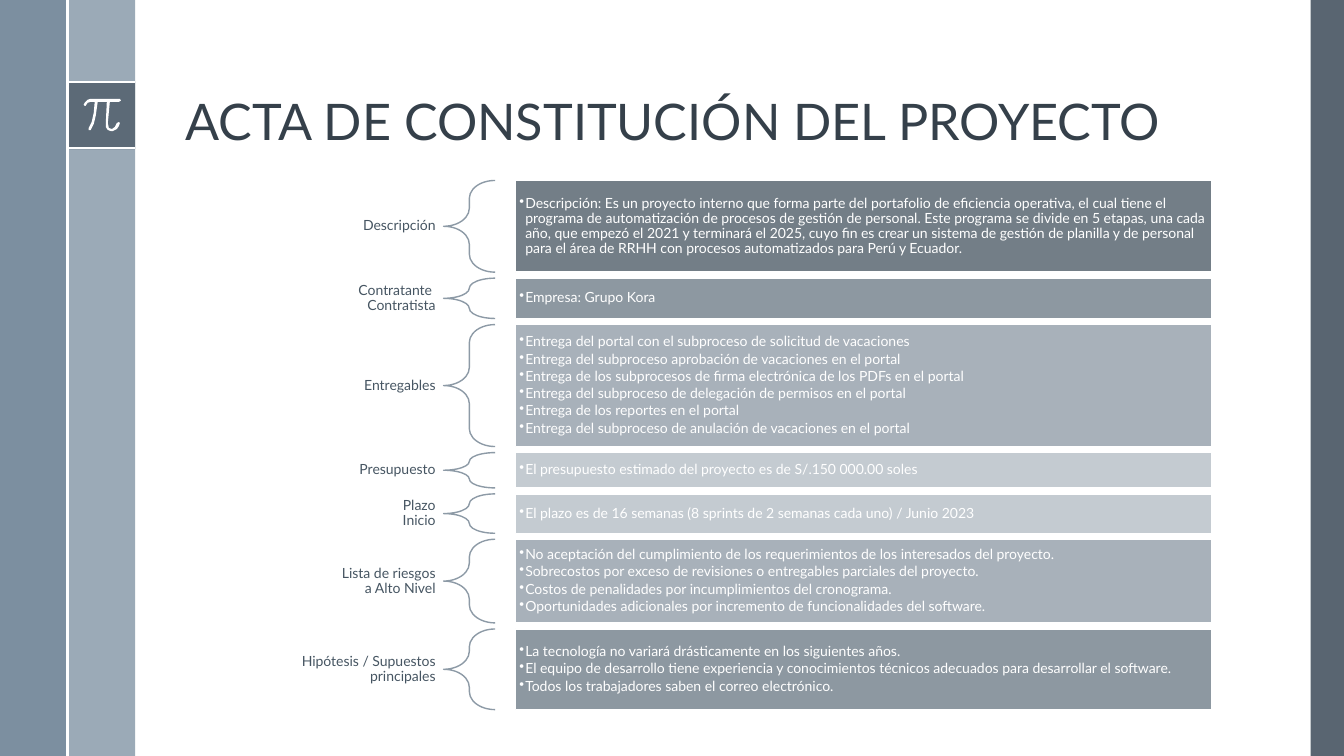
from dataclasses import dataclass

from lxml import etree
from pptx import Presentation
from pptx import util as u
from pptx.dml.color import RGBColor
from pptx.enum import shapes, text
from pptx.oxml.ns import qn


@dataclass(frozen=True)
class Theme:
    font: str = "Lato"
    title_size: int = 36
    text_size: int = 10
    white: str = "FFFFFF"
    title: str = "35404A"
    label: str = "465562"
    brace: str = "8D9AA6"
    dark: str = "475562"
    steel: str = "6A8093"
    mist: str = "9BAAB7"
    tones: tuple = ("737E87", "8D98A1", "A8B1BA", "C4CBD1")


PI_OUTLINE = [
    (1.18, 0.98), (0.9, 0.98), (0.87, 0.99), (0.84, 1.02), (0.83, 1.04),
    (0.84, 1.05), (0.85, 1.05), (0.87, 1.02), (0.9, 1.01), (0.94, 1.01),
    (0.93, 1.12), (0.91, 1.21), (0.88, 1.27), (0.88, 1.29), (0.9, 1.29),
    (0.93, 1.23), (0.95, 1.15), (0.97, 1.01), (1.06, 1.01), (1.05, 1.22),
    (1.05, 1.26), (1.07, 1.29), (1.1, 1.3), (1.12, 1.3), (1.16, 1.28),
    (1.18, 1.25), (1.19, 1.22), (1.18, 1.21), (1.16, 1.22), (1.14, 1.26),
    (1.11, 1.28), (1.08, 1.27), (1.07, 1.22), (1.09, 1.01), (1.18, 1.01),
    (1.2, 1), (1.19, 0.98),
]

SECTIONS = [
    ("Descripción", 0.91, 0, [
        "Descripción: Es un proyecto interno que forma parte del portafolio de "
        "eficiencia operativa, el cual tiene el programa de automatización de "
        "procesos de gestión de personal. Este programa se divide en 5 etapas, "
        "una cada año, que empezó el 2021 y terminará el 2025, cuyo fin es crear "
        "un sistema de gestión de planilla y de personal para el área de RRHH "
        "con procesos automatizados para Perú y Ecuador."]),
    ("Contratante \nContratista", 0.4, 1, ["Empresa: Grupo Kora"]),
    ("Entregables", 1.21, 2, [
        "Entrega del portal con el subproceso de solicitud de vacaciones",
        "Entrega del subproceso aprobación de vacaciones en el portal",
        "Entrega de los subprocesos de firma electrónica de los PDFs en el portal",
        "Entrega del subproceso de delegación de permisos en el portal",
        "Entrega de los reportes en el portal",
        "Entrega del subproceso de anulación de vacaciones en el portal"]),
    ("Presupuesto", 0.35, 3, [
        "El presupuesto estimado del proyecto es de S/.150 000.00 soles"]),
    ("Plazo\nInicio", 0.39, 3, [
        "El plazo es de 16 semanas (8 sprints de 2 semanas cada uno) / Junio 2023"]),
    ("Lista de riesgos\na Alto Nivel", 0.83, 2, [
        "No aceptación del cumplimiento de los requerimientos de los interesados del proyecto.",
        "Sobrecostos por exceso de revisiones o entregables parciales del proyecto.",
        "Costos de penalidades por incumplimientos del cronograma.",
        "Oportunidades adicionales por incremento de funcionalidades del software."]),
    ("Hipótesis / Supuestos\nprincipales", 0.8, 1, [
        "La tecnología no variará drásticamente en los siguientes años.",
        "El equipo de desarrollo tiene experiencia y conocimientos técnicos "
        "adecuados para desarrollar el software.",
        "Todos los trabajadores saben el correo electrónico."]),
]


class CharterSlide:
    def __init__(self, page, theme):
        self.page = page
        self.theme = theme

    def paint(self, shape, color, alpha=100):
        shape.shadow.inherit = False
        shape.fill.solid()
        shape.fill.fore_color.rgb = RGBColor.from_string(color)
        shape.line.fill.background()
        if alpha < 100:
            tint = shape.fill._xPr.find(qn("a:solidFill"))[0]
            etree.SubElement(tint, qn("a:alpha"), val=str(alpha * 1000))

    def outline(self, shape, color, width):
        shape.line.color.rgb = RGBColor.from_string(color)
        shape.line.width = u.Pt(width)

    def band(self, left, top, width, height, color, alpha=100):
        box = self.page.shapes.add_shape(
            shapes.MSO_SHAPE.RECTANGLE, *map(u.Inches, (left, top, width, height)))
        self.paint(box, color, alpha)
        return box

    def rule(self, *ends):
        line = self.page.shapes.add_connector(
            shapes.MSO_CONNECTOR.STRAIGHT, *map(u.Inches, ends))
        self.outline(line, self.theme.white, 1.5)
        etree.SubElement(line._element.spPr, qn("a:effectLst"))

    def symbol(self, points):
        corners = [(u.Inches(x), u.Inches(y)) for x, y in points]
        builder = self.page.shapes.build_freeform(*corners[0])
        builder.add_line_segments(corners[1:], close=True)
        self.paint(builder.convert_to_shape(), self.theme.white)

    def style(self, para, size, color, align=text.PP_ALIGN.LEFT):
        para.alignment = align
        para.line_spacing = 0.9
        para.font.name = self.theme.font
        para.font.size = u.Pt(size)
        para.font.color.rgb = RGBColor.from_string(color)

    def frame(self, shape, side, edge):
        frame = shape.text_frame
        frame.word_wrap = True
        frame.vertical_anchor = text.MSO_ANCHOR.MIDDLE
        frame.margin_left = frame.margin_right = u.Inches(side)
        frame.margin_top = frame.margin_bottom = u.Inches(edge)
        return frame

    def title(self, wording):
        box = self.page.shapes.title
        box.left, box.top, box.width, box.height = map(u.Inches, (1.74, 0.19, 10.7, 1.36))
        frame = box.text_frame
        frame.text = wording
        frame.word_wrap = True
        frame.auto_size = text.MSO_AUTO_SIZE.NONE
        frame.vertical_anchor = text.MSO_ANCHOR.BOTTOM
        self.style(frame.paragraphs[0], self.theme.title_size, self.theme.title)

    def label(self, wording, middle):
        height = 0.39 if "\n" in wording else 0.35
        box = self.page.shapes.add_textbox(
            *map(u.Inches, (1.86, middle - height / 2, 2.54, height)))
        para = self.frame(box, 0.08, 0.03).paragraphs[0]
        para.text = wording
        self.style(para, self.theme.text_size, self.theme.label, text.PP_ALIGN.RIGHT)

    def brace(self, top, height):
        brace = self.page.shapes.add_shape(
            shapes.MSO_SHAPE.LEFT_BRACE, *map(u.Inches, (4.4, top, 0.51, height)))
        brace.shadow.inherit = False
        brace.fill.background()
        brace.adjustments[0] = 0.35
        brace.adjustments[1] = 0.5
        self.outline(brace, self.theme.brace, 1)

    def details(self, top, height, color, items):
        box = self.band(5.11, top, 6.91, height, color)
        self.outline(box, self.theme.white, 1)
        frame = self.frame(box, 0.04, 0.04)
        for index, item in enumerate(items):
            para = frame.add_paragraph() if index else frame.paragraphs[0]
            para.text = item
            self.style(para, self.theme.text_size, self.theme.white)
            para.space_after = u.Pt(1.5)
            properties = para._p.get_or_add_pPr()
            properties.set("marL", str(u.Inches(0.06)))
            properties.set("indent", str(u.Inches(-0.06)))
            etree.SubElement(properties, qn("a:buChar"), char="•")

    def section(self, top, wording, height, tone, items):
        self.label(wording, top + height / 2)
        self.brace(top, height)
        self.details(top, height, self.theme.tones[tone], items)


def main():
    deck = Presentation()
    deck.slide_width, deck.slide_height = u.Inches(13.33), u.Inches(7.5)
    theme = Theme()
    slide = CharterSlide(deck.slides.add_slide(deck.slide_layouts[5]), theme)

    slide.band(13, 0, 0.33, 7.5, theme.dark, 90)
    slide.band(0.67, 0, 0.67, 7.5, theme.mist)
    slide.band(0, 0, 0.67, 7.5, theme.steel, 88)
    slide.band(0.67, 0.81, 0.67, 0.67, theme.dark, 75)
    for height in (0.81, 1.47):
        slide.rule(0.67, height, 1.34, height)
    slide.symbol(PI_OUTLINE)
    slide.rule(0.67, 0, 0.67, 7.5)

    slide.title("ACTA DE CONSTITUCIÓN DEL PROYECTO")
    top, gap = 1.79, 0.06
    for wording, height, tone, items in SECTIONS:
        slide.section(top, wording, height, tone, items)
        top += height + gap

    deck.save("out.pptx")


if __name__ == "__main__":
    main()
